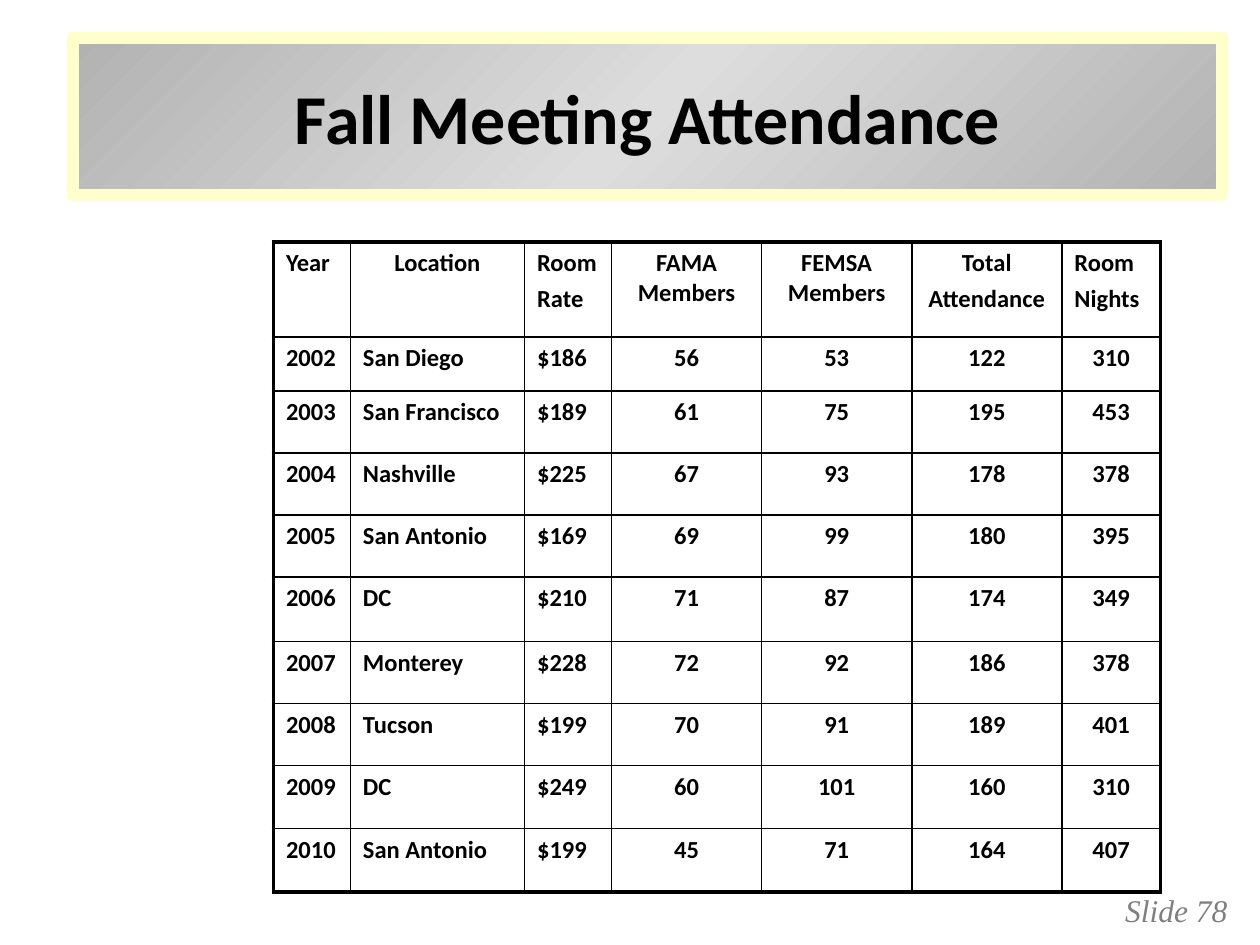
from copy import deepcopy

from lxml.etree import SubElement
from pptx import Presentation
from pptx.dml.color import RGBColor
from pptx.enum.shapes import MSO_SHAPE as Shape
from pptx.enum.text import MSO_ANCHOR as Anchor, PP_ALIGN as Align
from pptx.oxml.ns import qn
from pptx.util import Inches, Pt

WIDTH, HEIGHT = Inches(10), Inches(7.5)
BLACK = "000000"
COLUMN_SHARES = [0.61, 1.38, 0.69, 1.19, 1.19, 1.19, 0.78]
ROW_SHARES = [0.75, 0.43, 0.49, 0.49, 0.49, 0.51, 0.49, 0.49, 0.5, 0.5]
HEADINGS = ["Year", "Location", "Room\nRate", "FAMA Members",
            "FEMSA Members", "Total\nAttendance", "Room\nNights"]
MEETINGS = [
    ["2002", "San Diego", "$186", "56", "53", "122", "310"],
    ["2003", "San Francisco", "$189", "61", "75", "195", "453"],
    ["2004", "Nashville", "$225", "67", "93", "178", "378"],
    ["2005", "San Antonio", "$169", "69", "99", "180", "395"],
    ["2006", "DC", "$210", "71", "87", "174", "349"],
    ["2007", "Monterey", "$228", "72", "92", "186", "378"],
    ["2008", "Tucson", "$199", "70", "91", "189", "401"],
    ["2009", "DC", "$249", "60", "101", "160", "310"],
    ["2010", "San Antonio", "$199", "45", "71", "164", "407"],
]
CENTERED_HEADINGS = {1, 3, 4, 5}
CENTERED_VALUES = {3, 4, 5, 6}


def color(hex_code):
    """Turn a hex string into a colour."""
    return RGBColor.from_string(hex_code)


def share_box(left, top, width, height):
    """Turn percentages of the slide into a box."""
    return (round(WIDTH * left / 100), round(HEIGHT * top / 100),
            round(WIDTH * width / 100), round(HEIGHT * height / 100))


def write(frame, text, size, align, font="Calibri", ink=BLACK, bold=True, italic=False):
    """Write one paragraph for each line of the text."""
    frame.word_wrap = True
    frame.text = text
    for index, para in enumerate(frame.paragraphs):
        para.alignment = align
        if index:
            para.space_before = Pt(size / 4)
        para.font.name, para.font.size = font, Pt(size)
        para.font.bold, para.font.italic = bold, italic
        para.font.color.rgb = color(ink)


def add_banner(page, box, text):
    """Place the framed title with its three-stop gradient."""
    banner = page.shapes.add_shape(Shape.RECTANGLE, *box)
    banner.shadow.inherit = False
    banner.line.color.rgb = color("FFFFCC")
    banner.line.width = Pt(7)
    banner.fill.gradient()
    banner.fill.gradient_angle = 315
    stop_list = next(banner.element.iter(qn("a:gsLst")))
    stop_list.insert(1, deepcopy(stop_list[0]))
    for stop, position, shade in zip(banner.fill.gradient_stops, (0, 0.5, 1),
                                     ("B2B2B2", "DDDDDD", "B2B2B2")):
        stop.position = position
        stop.color.rgb = color(shade)
    write(banner.text_frame, text, 40, Align.CENTER)
    banner.text_frame.vertical_anchor = Anchor.MIDDLE


def set_borders(cell, edges):
    """Draw the four cell borders, thicker on the table's outer edges."""
    properties = cell._tc.get_or_add_tcPr()
    for side, outer in zip("LRTB", edges):
        width = Pt(2.25 if outer else 1)
        line = SubElement(properties, qn(f"a:ln{side}"), w=str(width))
        fill = SubElement(line, qn("a:solidFill"))
        SubElement(fill, qn("a:srgbClr"), val=BLACK)


def add_attendance(page, box, rows):
    """Place the attendance table in its box."""
    left, top, width, height = box
    last_row, last_column = len(rows) - 1, len(rows[0]) - 1
    table = page.shapes.add_table(len(rows), len(rows[0]), *box).table
    table.first_row = table.horz_banding = False
    for column, share in zip(table.columns, COLUMN_SHARES):
        column.width = round(width * share / sum(COLUMN_SHARES))
    for row, share in zip(table.rows, ROW_SHARES):
        row.height = round(height * share / sum(ROW_SHARES))
    for r, values in enumerate(rows):
        centered = CENTERED_VALUES if r else CENTERED_HEADINGS
        for c, value in enumerate(values):
            cell = table.cell(r, c)
            write(cell.text_frame, value, 14, Align.CENTER if c in centered else Align.LEFT)
            set_borders(cell, (c == 0, c == last_column, r == 0, r == last_row))
            cell.fill.background()


def add_slide_number(page, box, text):
    """Place the slide number at the right of its box."""
    label = page.shapes.add_textbox(*box)
    write(label.text_frame, text, 18, Align.RIGHT, "Times New Roman", "808080", False, True)


def main():
    """Build and save the slide."""
    deck = Presentation()
    deck.slide_width, deck.slide_height = WIDTH, HEIGHT
    page = deck.slides.add_slide(deck.slide_layouts[6])
    add_slide_number(page, share_box(74.2, 93.6, 24.2, 5.33), "Slide 78")
    add_banner(page, share_box(5.8, 4, 91.2, 16.67), "Fall Meeting Attendance")
    add_attendance(page, share_box(21.7, 25.6, 70.4, 68.8), [HEADINGS, *MEETINGS])
    deck.save("out.pptx")


if __name__ == "__main__":
    main()
